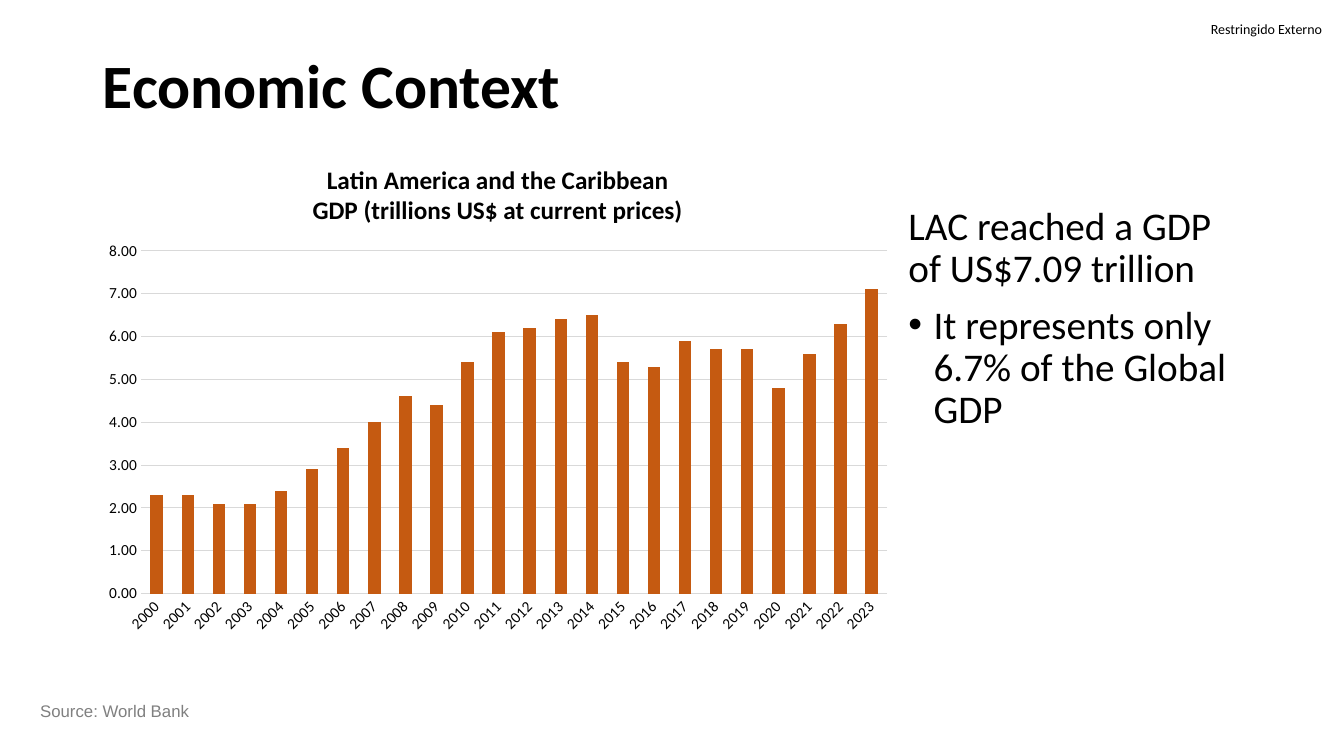
from lxml import etree
from pptx import Presentation
from pptx import util as u
from pptx.chart.data import CategoryChartData
from pptx.dml.color import RGBColor
from pptx.enum import chart as ch, text
from pptx.oxml import parse_xml
from pptx.oxml.ns import nsdecls, qn

BLACK, GRAY, GRID, ORANGE = "000000", "808080", "D9D9D9", "C55A11"
YEARS = [str(year) for year in range(2000, 2024)]
GDP = [2.3, 2.3, 2.1, 2.1, 2.4, 2.9, 3.4, 4.0, 4.6, 4.4, 5.4, 6.1,
       6.2, 6.4, 6.5, 5.4, 5.3, 5.9, 5.7, 5.7, 4.8, 5.6, 6.3, 7.1]


def rgb(value):
    return RGBColor.from_string(value)


def style_font(font, size, color=BLACK, name="Calibri", bold=False):
    font.size, font.name, font.bold = u.Pt(size), name, bold
    font.color.rgb = rgb(color)


def place(shape, box):
    shape.left, shape.top, shape.width, shape.height = map(u.Inches, box)


def style_line(line, color):
    line.color.rgb = rgb(color)
    line.width = u.Pt(0.75)


def manual_layout(chart_box, left, top, width=None, height=None):
    """Layout given in inches inside the chart; the size is optional."""
    chart_width, chart_height = chart_box[2:]
    target = size = ""
    if width:
        target = '<c:layoutTarget val="inner"/>'
        size = (f'<c:w val="{width / chart_width}"/>'
                f'<c:h val="{height / chart_height}"/>')
    return parse_xml(
        f'<c:layout {nsdecls("c")}><c:manualLayout>{target}'
        f'<c:xMode val="edge"/><c:yMode val="edge"/>'
        f'<c:x val="{left / chart_width}"/><c:y val="{top / chart_height}"/>'
        f'{size}</c:manualLayout></c:layout>')


def add_label(slide, box, words, size, color, font, has_margins=True):
    label = slide.shapes.add_textbox(*map(u.Inches, box))
    frame = label.text_frame
    frame.word_wrap = True
    if not has_margins:
        frame.margin_left = frame.margin_right = 0
        frame.margin_top = frame.margin_bottom = 0
    frame.text = words
    style_font(frame.paragraphs[0].runs[0].font, size, color, font)


def fill_title(heading, box, words):
    place(heading, box)
    frame = heading.text_frame
    frame.text = words
    frame.vertical_anchor = text.MSO_ANCHOR.MIDDLE
    frame.auto_size = text.MSO_AUTO_SIZE.NONE
    line = frame.paragraphs[0]
    line.alignment = text.PP_ALIGN.LEFT
    line.line_spacing = 0.9
    style_font(line.runs[0].font, 44, bold=True)


def fill_findings(findings, box, lead, point):
    place(findings, box)
    frame = findings.text_frame
    frame.text = lead
    frame.auto_size = text.MSO_AUTO_SIZE.NONE
    frame.add_paragraph().text = point
    for line, indent, bullet in zip(frame.paragraphs, (0, 0.25), (None, "•")):
        line.line_spacing = 0.9
        line.space_before = u.Pt(10)
        style_font(line.runs[0].font, 28)
        props = line._p.get_or_add_pPr()
        props.set("marL", str(u.Inches(indent)))
        props.set("indent", str(-u.Inches(indent)))
        if bullet:
            etree.SubElement(props, qn("a:buFont")).set("typeface", "Arial")
            etree.SubElement(props, qn("a:buChar")).set("char", bullet)
        else:
            etree.SubElement(props, qn("a:buNone"))


def add_gdp_chart(slide, box):
    data = CategoryChartData(number_format="#,##0.00")
    data.categories = YEARS
    data.add_series("GDP", GDP)
    chart = slide.shapes.add_chart(
        ch.XL_CHART_TYPE.COLUMN_STACKED, *map(u.Inches, box), data).chart
    style_font(chart.font, 11)
    chart.has_legend = False

    # Chart title
    heading = chart.chart_title.text_frame
    heading.text = "Latin America and the Caribbean"
    heading.add_paragraph().text = "GDP (trillions US$ at current prices)"
    for line in heading.paragraphs:
        style_font(line.runs[0].font, 18, bold=True)
    chart.chart_title.include_in_layout = False

    # Columns
    plot = chart.plots[0]
    plot.gap_width, plot.overlap, plot.vary_by_categories = 150, 100, False
    columns = plot.series[0].format.fill
    columns.solid()
    columns.fore_color.rgb = rgb(ORANGE)

    # Axes
    years, amounts = chart.category_axis, chart.value_axis
    for axis in (years, amounts):
        axis.major_tick_mark = axis.minor_tick_mark = ch.XL_TICK_MARK.NONE
        style_font(axis.tick_labels.font, 11)
    style_line(years.format.line, GRID)
    amounts.format.line.fill.background()
    amounts.minimum_scale, amounts.maximum_scale, amounts.major_unit = 0, 8, 1
    amounts.has_major_gridlines = True
    style_line(amounts.major_gridlines.format.line, GRID)
    amounts.tick_labels.number_format = "#,##0.00"
    amounts.tick_labels.number_format_is_linked = False

    # Slanted years, title and plot positions
    root = chart.element
    root.xpath(".//c:catAx/c:txPr/a:bodyPr")[0].set("rot", "-2700000")
    for old in root.xpath(".//c:title/c:layout | .//c:plotArea/c:layout"):
        old.getparent().remove(old)
    root.xpath(".//c:title/c:tx")[0].addnext(manual_layout(box, 2.15, 0.16))
    root.xpath(".//c:plotArea")[0].insert(
        0, manual_layout(box, 0.48, 1.06, 7.4, 3.4))


def build_economic_context(deck):
    slide = deck.slides.add_slide(deck.slide_layouts[1])
    add_label(slide, (12.01, 0.2, 1.2, 0.17), "Restringido Externo",
              10, BLACK, "Calibri", has_margins=False)
    fill_title(slide.shapes.title, (0.92, 0.4, 11.5, 0.96), "Economic Context")
    fill_findings(slide.placeholders[1], (8.91, 2, 3.51, 4.76),
                  "LAC reached a GDP of US$7.09 trillion",
                  "It represents only 6.7% of the Global GDP")
    add_gdp_chart(slide, (0.92, 1.43, 8.04, 4.95))
    add_label(slide, (0.3, 6.9, 6.67, 0.3), "Source: World Bank",
              12, GRAY, "Arial")


def main():
    deck = Presentation()
    deck.slide_width, deck.slide_height = u.Inches(13.33), u.Inches(7.5)
    build_economic_context(deck)
    deck.save("out.pptx")


if __name__ == "__main__":
    main()
